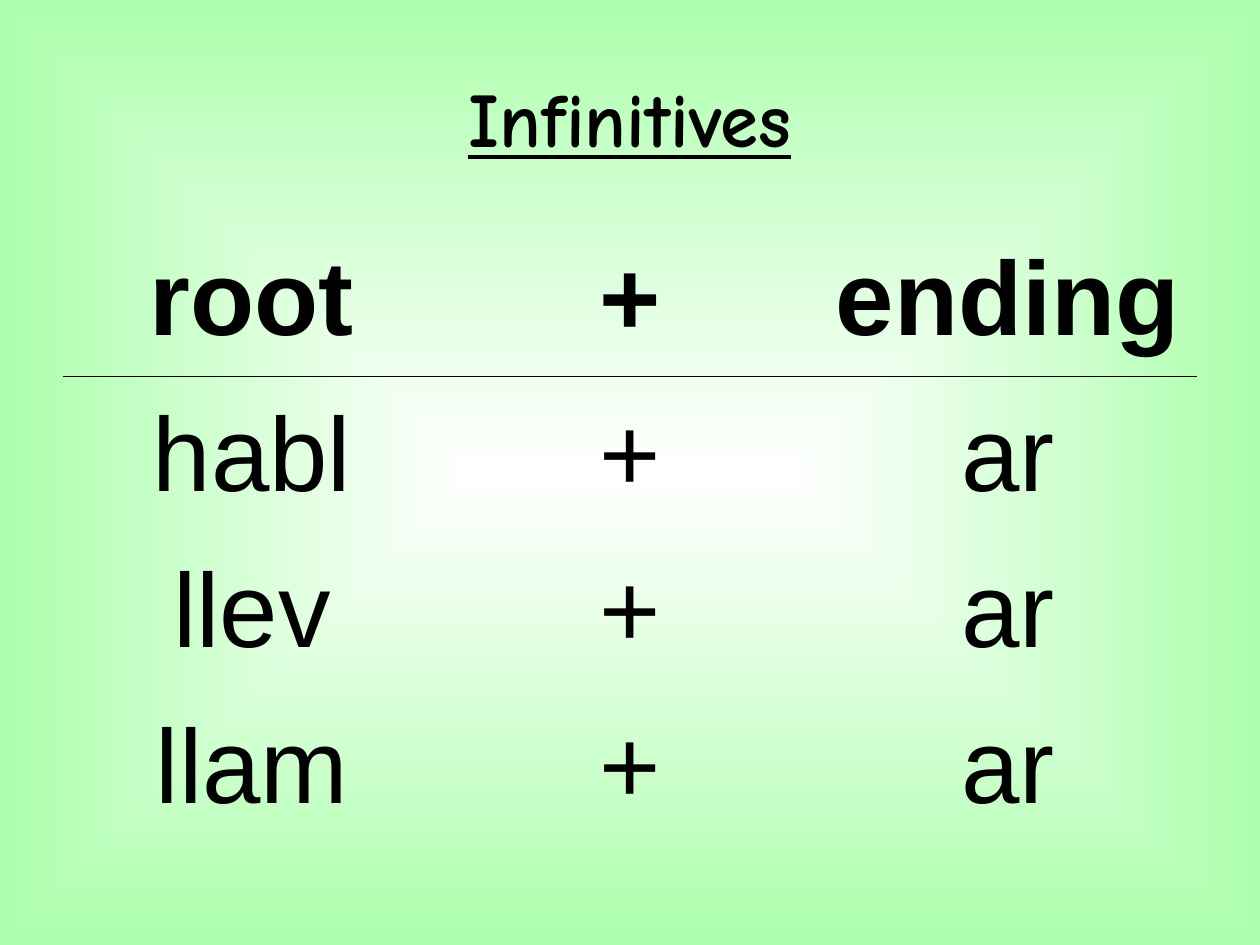
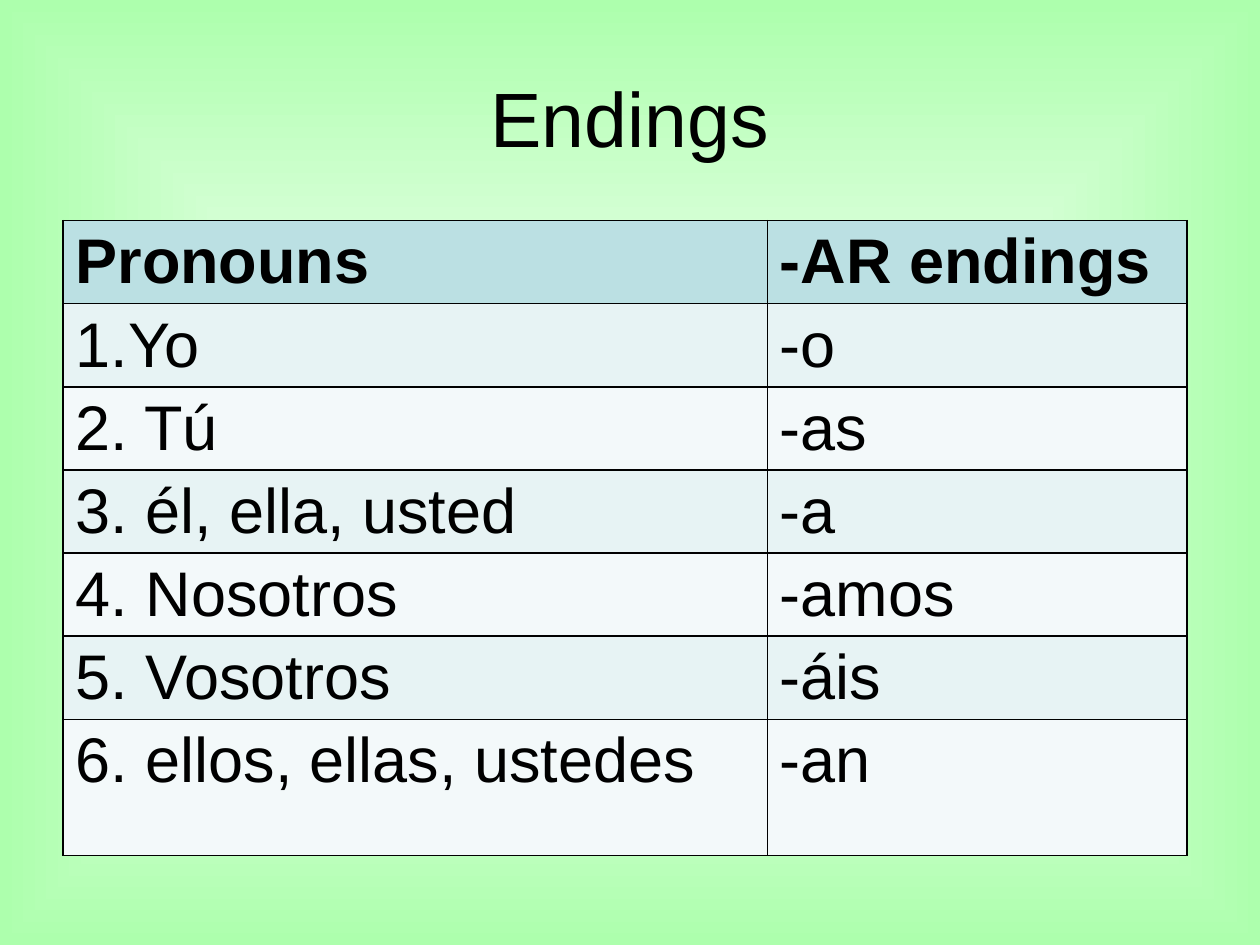
"""Build two Spanish grammar slides: infinitives and -AR verb endings."""
from dataclasses import dataclass

from lxml import etree
from pptx import Presentation
from pptx.dml.color import RGBColor
from pptx.enum.text import MSO_ANCHOR, PP_ALIGN
from pptx.oxml import parse_xml
from pptx.oxml.ns import nsdecls, qn
from pptx.slide import Slide
from pptx.table import _Cell
from pptx.text.text import _Paragraph
from pptx.util import Inches, Pt

CENTER, LEFT = PP_ALIGN.CENTER, PP_ALIGN.LEFT
MIDDLE, TOP = MSO_ANCHOR.MIDDLE, MSO_ANCHOR.TOP

BLACK = RGBColor(0x00, 0x00, 0x00)
WHITE = RGBColor(0xFF, 0xFF, 0xFF)
MINT = RGBColor(0xAD, 0xFF, 0xAD)
HEADER_TEAL = RGBColor(0xBB, 0xE0, 0xE3)
BAND_TEALS = (RGBColor(0xE7, 0xF3, 0xF4), RGBColor(0xF3, 0xF9, 0xFA))

BODY_FONT = "Arial"
TITLE_FONT = "Comic Neue"
NO_GRID_STYLE = "{2D5ABB26-0587-4C30-8999-92F81FD0307C}"
SIDES = "LRTB"
LEFT_MARGIN, TABLE_TOP = 0.5, 1.75


@dataclass(frozen=True)
class Title:
    """Heading of a slide."""

    text: str
    font: str = BODY_FONT
    emphasis: bool = False


@dataclass(frozen=True)
class Grid:
    """Table of words whose first row is bold."""

    rows: tuple[tuple[str, ...], ...]
    widths: tuple[float, ...]
    heights: tuple[float, ...]
    size: int
    align: PP_ALIGN
    anchor: MSO_ANCHOR
    space_before: int = 0
    bottom_margin: float = 0.05
    boxed: bool = False

    def ruled_sides(self, row: int) -> str:
        """Return the sides of a cell in this row that carry a line."""
        if self.boxed:
            return SIDES
        return {0: "B", 1: "T"}.get(row, "")


INFINITIVES = Grid(
    rows=(("root", "+", "ending"),
          *((root, "+", "ar") for root in ("habl", "llev", "llam"))),
    widths=(3,) * 3, heights=(1.24,) * 4,
    size=60, align=CENTER, anchor=MIDDLE, space_before=20,
)
ENDINGS = Grid(
    rows=(
        ("Pronouns", "-AR endings"),
        ("1.Yo", "-o"),
        ("2. Tú", "-as"),
        ("3. él, ella, usted", "-a"),
        ("4. Nosotros", "-amos"),
        ("5. Vosotros", "-áis"),
        ("6. ellos, ellas, ustedes", "-an"),
    ),
    widths=(5.59, 3.33), heights=(0.66,) * 6 + (1.08,),
    size=36, align=LEFT, anchor=TOP, bottom_margin=0, boxed=True,
)
SLIDES = (
    (Title("Infinitives", TITLE_FONT, emphasis=True), INFINITIVES),
    (Title("Endings"), ENDINGS),
)


def paint_background(slide: Slide) -> None:
    """Fill the slide with a gradient from a white centre to mint edges."""
    slide.background.fill.gradient()
    gradient = slide.element.find(".//" + qn("a:gradFill"))
    gradient.getparent().replace(gradient, parse_xml(
        f'<a:gradFill {nsdecls("a")} rotWithShape="1"><a:gsLst>'
        f'<a:gs pos="0"><a:srgbClr val="{WHITE}"/></a:gs>'
        f'<a:gs pos="100000"><a:srgbClr val="{MINT}"/></a:gs></a:gsLst>'
        '<a:path path="shape">'
        '<a:fillToRect l="50000" t="50000" r="50000" b="50000"/>'
        '</a:path></a:gradFill>'))


def style_paragraph(paragraph: _Paragraph, font: str, size: int,
                    align: PP_ALIGN, bold: bool) -> None:
    """Apply the shared text look to a paragraph."""
    paragraph.alignment = align
    paragraph.font.name = font
    paragraph.font.size = Pt(size)
    paragraph.font.bold = bold
    paragraph.font.color.rgb = BLACK


def add_title(slide: Slide, title: Title) -> None:
    """Add the centred heading."""
    box = slide.shapes.add_textbox(
        Inches(LEFT_MARGIN), Inches(0.3), Inches(9), Inches(1.25))
    frame = box.text_frame
    frame.word_wrap = True
    frame.vertical_anchor = MIDDLE
    heading = frame.paragraphs[0]
    heading.text = title.text
    style_paragraph(heading, title.font, 44, CENTER, title.emphasis)
    heading.font.underline = title.emphasis


def rule_cell(cell: _Cell, ruled: str) -> None:
    """Draw one-point lines on the ruled sides and none on the others."""
    properties = cell._tc.get_or_add_tcPr()
    for side in SIDES:
        line = etree.SubElement(properties, qn(f"a:ln{side}"), w=str(Pt(1)))
        if side in ruled:
            paint = etree.SubElement(line, qn("a:solidFill"))
            etree.SubElement(paint, qn("a:srgbClr"), val=str(BLACK))
        else:
            etree.SubElement(line, qn("a:noFill"))


def fill_cell(cell: _Cell, grid: Grid, row: int) -> None:
    """Give header and body rows of a boxed grid their colours."""
    if not grid.boxed:
        cell.fill.background()
        return
    cell.fill.solid()
    cell.fill.fore_color.rgb = (
        BAND_TEALS[(row - 1) % 2] if row else HEADER_TEAL)


def add_grid(slide: Slide, grid: Grid) -> None:
    """Add the word table."""
    table = slide.shapes.add_table(
        len(grid.heights), len(grid.widths),
        Inches(LEFT_MARGIN), Inches(TABLE_TOP),
        Inches(sum(grid.widths)), Inches(sum(grid.heights))).table
    table.first_row = table.horz_banding = False
    table._tbl.tblPr.find(qn("a:tableStyleId")).text = NO_GRID_STYLE
    for column, width in zip(table.columns, grid.widths):
        column.width = Inches(width)
    for row, (words, height) in enumerate(zip(grid.rows, grid.heights)):
        table.rows[row].height = Inches(height)
        for column, word in enumerate(words):
            cell = table.cell(row, column)
            cell.vertical_anchor = grid.anchor
            cell.margin_bottom = Inches(grid.bottom_margin)
            entry = cell.text_frame.paragraphs[0]
            entry.text = word
            style_paragraph(entry, BODY_FONT, grid.size, grid.align, row == 0)
            if grid.space_before:
                spacing = etree.Element(qn("a:spcBef"))
                etree.SubElement(spacing, qn("a:spcPct"),
                                 val=str(grid.space_before * 1000))
                entry._p.get_or_add_pPr().insert(0, spacing)
            rule_cell(cell, grid.ruled_sides(row))
            fill_cell(cell, grid, row)


def main() -> None:
    """Build and save the presentation."""
    presentation = Presentation()
    presentation.slide_width = Inches(10)
    presentation.slide_height = Inches(7.5)
    blank = presentation.slide_layouts[6]
    for title, grid in SLIDES:
        slide = presentation.slides.add_slide(blank)
        paint_background(slide)
        add_title(slide, title)
        add_grid(slide, grid)
    presentation.save("out.pptx")


if __name__ == "__main__":
    main()
